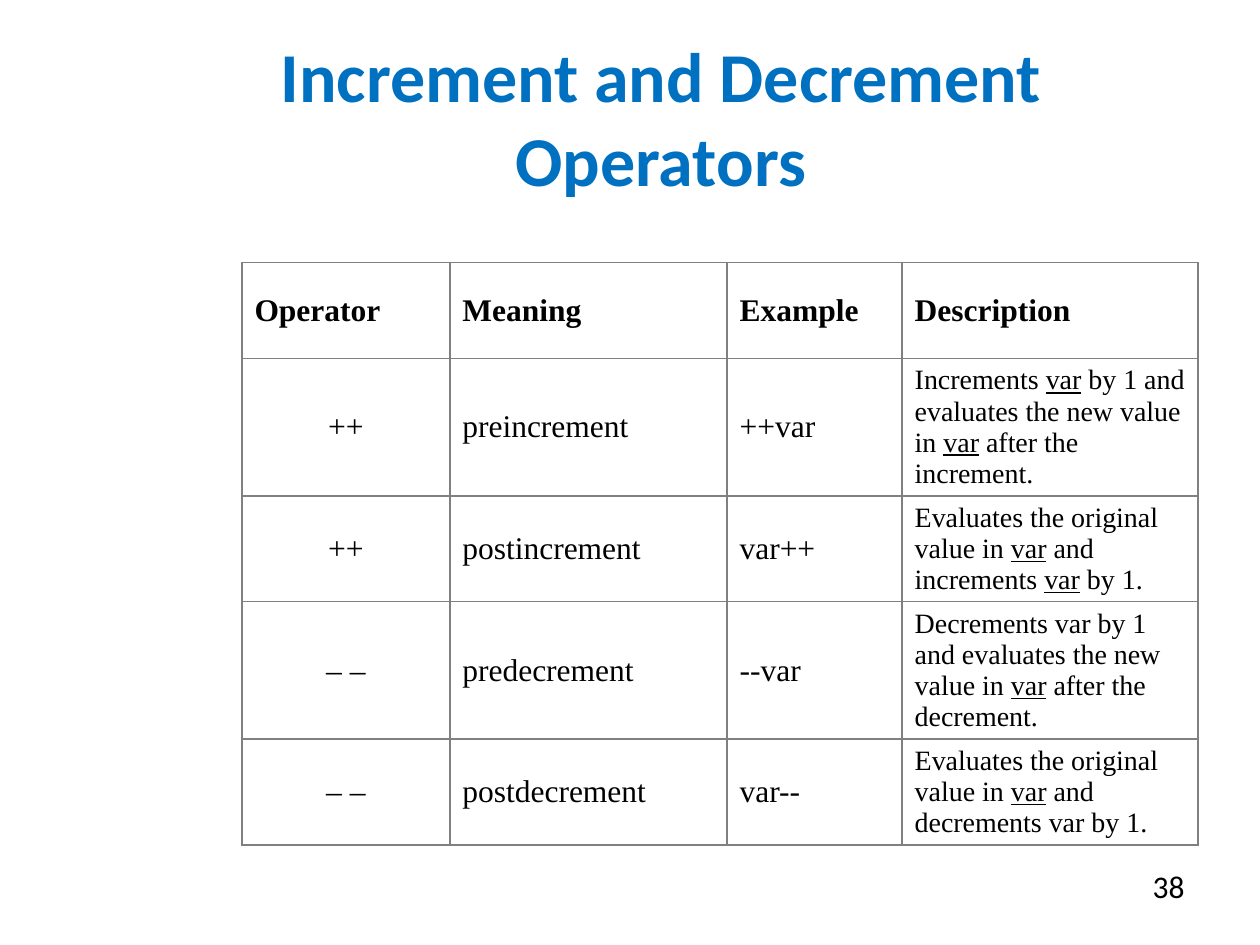
from lxml.etree import SubElement
from pptx import Presentation
from pptx.dml.color import RGBColor
from pptx.enum.text import MSO_ANCHOR as Anchor, MSO_AUTO_SIZE as Fit, PP_ALIGN as Align
from pptx.oxml.ns import qn
from pptx.util import Inches, Pt

WIDE, HIGH = 10, 7.5
SERIF, SANS = "Times New Roman", "Calibri"
COLS = [1.65, 2.2, 1.39, 2.35]
ROWS = [0.76, 1.09, 0.84, 1.09, 0.84]

# Underscores enclose underlined words
DATA = [
    ["Operator", "Meaning", "Example", "Description"],
    ["++", "preincrement", "++var",
     "Increments _var_ by 1 and evaluates the new value in _var_ after the increment."],
    ["++", "postincrement", "var++",
     "Evaluates the original value in _var_ and increments _var_ by 1."],
    ["– –", "predecrement", "--var",
     "Decrements var by 1 and evaluates the new value in _var_ after the decrement."],
    ["– –", "postdecrement", "var--",
     "Evaluates the original value in _var_ and decrements var by 1."],
]


def color(code):
    return RGBColor.from_string(code)


def style(para, face, size, code="000000", bold=False, align=Align.LEFT):
    para.alignment = align
    font = para.font
    font.name, font.size, font.bold = face, Pt(size), bold
    font.color.rgb = color(code)


def add_title(slide, text):
    title = slide.shapes.title
    title.left, title.top = Inches(0.183 * WIDE), Inches(0.04 * HIGH)
    title.width, title.height = Inches(0.683 * WIDE), Inches(HIGH / 6)
    frame = title.text_frame
    frame.text = text
    frame.auto_size = Fit.NONE
    frame.vertical_anchor = Anchor.MIDDLE
    style(frame.paragraphs[0], SANS, 40, "0070C0", True, Align.CENTER)


def add_borders(cell, code):
    props = cell._tc.get_or_add_tcPr()
    for index, side in enumerate(("lnL", "lnR", "lnT", "lnB")):
        line = props.makeelement(qn(f"a:{side}"), {"w": str(Pt(1))})
        fill = SubElement(line, qn("a:solidFill"))
        SubElement(fill, qn("a:srgbClr"), val=code)
        props.insert(index, line)


def fill_cell(cell, text, row, col):
    cell.fill.background()
    cell.vertical_anchor = Anchor.MIDDLE
    add_borders(cell, "808080")
    para = cell.text_frame.paragraphs[0]
    for index, part in enumerate(text.split("_")):
        run = para.add_run()
        run.text = part
        if index % 2:
            run.font.underline = True
    head = row == 0
    size = 16 if col == 3 and not head else 18
    align = Align.CENTER if col == 0 and not head else Align.LEFT
    style(para, SERIF, size, bold=head, align=align)


def add_grid(slide):
    frame = slide.shapes.add_table(
        len(ROWS), len(COLS), Inches(0.192 * WIDE), Inches(0.278 * HIGH),
        Inches(sum(COLS)), Inches(sum(ROWS)))
    table = frame.table
    table.first_row = table.horz_banding = False
    for col, width in zip(table.columns, COLS):
        col.width = Inches(width)
    for row, height in zip(table.rows, ROWS):
        row.height = Inches(height)
    for r, texts in enumerate(DATA):
        for c, text in enumerate(texts):
            fill_cell(table.cell(r, c), text, r, c)


def add_number(slide, text):
    box = slide.shapes.add_textbox(
        Inches(0.717 * WIDE), Inches(0.911 * HIGH),
        Inches(0.233 * WIDE), Inches(0.069 * HIGH))
    frame = box.text_frame
    frame.word_wrap = True
    frame.text = text
    style(frame.paragraphs[0], SANS, 18, align=Align.RIGHT)


def main():
    deck = Presentation()
    deck.slide_width, deck.slide_height = Inches(WIDE), Inches(HIGH)
    slide = deck.slides.add_slide(deck.slide_layouts[5])
    add_title(slide, "Increment and Decrement Operators")
    add_grid(slide)
    add_number(slide, "38")
    deck.save("out.pptx")


if __name__ == "__main__":
    main()
